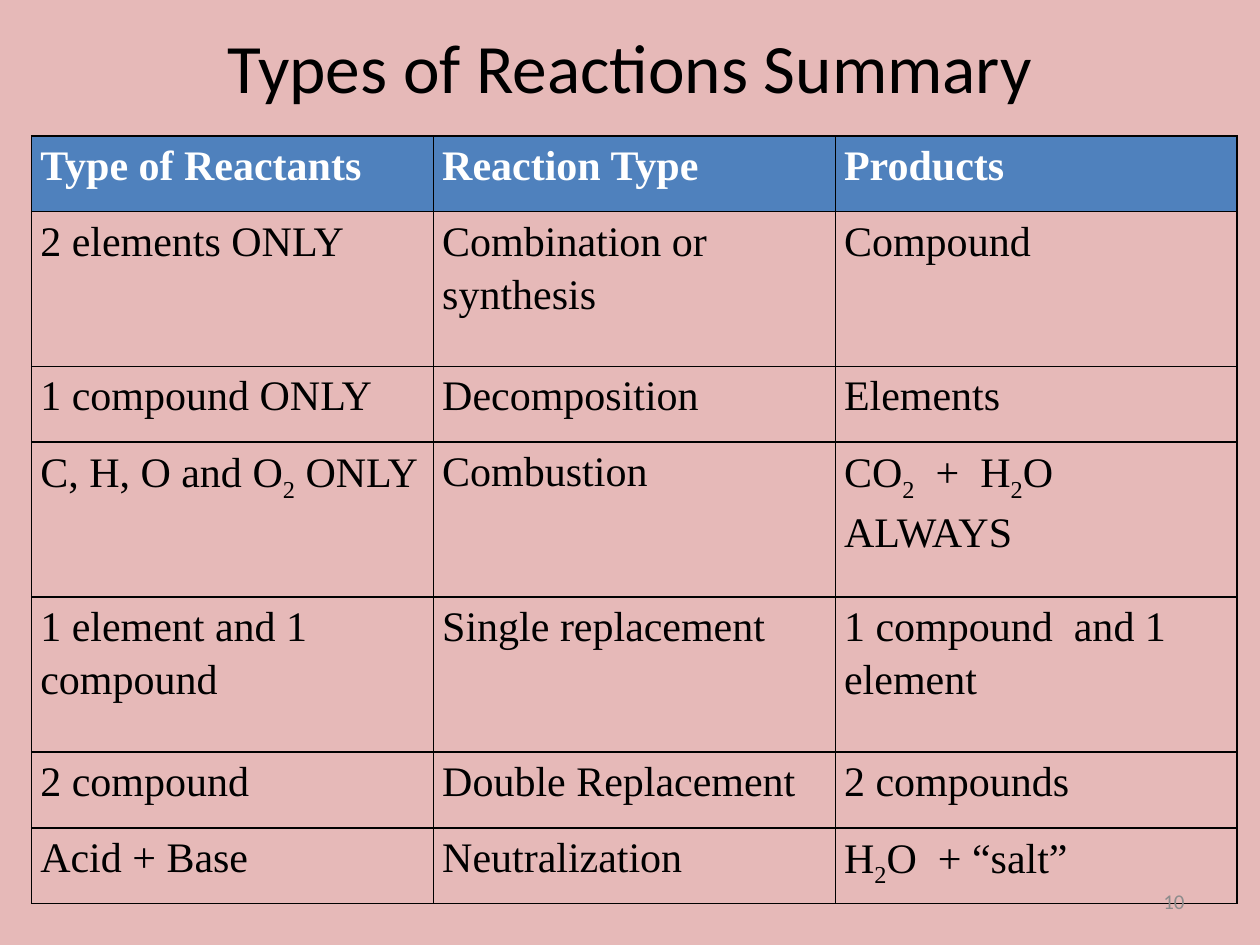
import pptx
import pptx.util
import pptx.dml.color
import pptx.enum.text
import pptx.oxml
from lxml import etree

Inches = pptx.util.Inches
Pt = pptx.util.Pt
ALIGN = pptx.enum.text.PP_ALIGN
MIDDLE = pptx.enum.text.MSO_ANCHOR.MIDDLE

COLORS = {"back": "E6B9B8", "head": "4F81BD", "text": "000000",
          "light": "FFFFFF", "line": "000000", "number": "8C8C8C"}

# Text between tildes is subscript; a newline is a line break
ROWS = [
    ("Type of Reactants", "Reaction Type", "Products"),
    ("2 elements ONLY", "Combination or synthesis", "Compound"),
    ("1 compound ONLY", "Decomposition", "Elements"),
    ("C, H, O and O~2~ ONLY", "Combustion", "CO~2~  +  H~2~O\nALWAYS"),
    ("1 element and 1 compound", "Single replacement",
     "1 compound  and 1 element"),
    ("2 compound", "Double Replacement", "2 compounds"),
    ("Acid + Base", "Neutralization", "H~2~O  + “salt”"),
]
SHORT, TALL = 0.6, 1.23
HEIGHTS = [SHORT, TALL, SHORT, TALL, TALL, SHORT, SHORT]
WIDTH = 3.19


def rgb(name):
    return pptx.dml.color.RGBColor.from_string(COLORS[name])


def add_run(para, text, size, font, color, bold=False):
    run = para.add_run()
    run.text = text
    run.font.size = Pt(size)
    run.font.name = font
    run.font.bold = bold
    run.font.color.rgb = rgb(color)
    return run


def add_title(slide, text):
    title = slide.shapes.title
    title.left, title.top = Inches(0.5), Inches(0.17)
    title.width, title.height = Inches(9), Inches(0.7)
    frame = title.text_frame
    frame.vertical_anchor = MIDDLE
    frame.auto_size = pptx.enum.text.MSO_AUTO_SIZE.NONE
    para = frame.paragraphs[0]
    para.alignment = ALIGN.CENTER
    add_run(para, text, 39.6, "Calibri", "text")


def add_borders(cell):
    props = cell._tc.get_or_add_tcPr()
    for place, side in enumerate(("lnL", "lnR", "lnT", "lnB")):
        line = pptx.oxml.parse_xml(
            '<a:%s xmlns:a="http://schemas.openxmlformats.org/drawingml/2006/main"'
            ' w="12700"><a:solidFill><a:srgbClr val="%s"/></a:solidFill></a:%s>'
            % (side, COLORS["line"], side))
        props.insert(place, line)


def fill_cell(cell, text, head):
    cell.margin_left = cell.margin_right = Inches(0.07)
    cell.margin_top = cell.margin_bottom = 0
    if head:
        cell.fill.solid()
        cell.fill.fore_color.rgb = rgb("head")
    else:
        cell.fill.background()
    add_borders(cell)

    para = cell.text_frame.paragraphs[0]
    para.line_spacing = 1.15
    color = "light" if head else "text"
    for i, part in enumerate(text.split("~")):
        for j, piece in enumerate(part.split("\n")):
            if j:
                para.add_line_break()
            run = add_run(para, piece, 24, "Times New Roman", color, head)
            if i % 2:
                run.font._element.set("baseline", "-25000")


def add_grid(slide):
    count = len(ROWS[0])
    table = slide.shapes.add_table(
        len(ROWS), count, Inches(0.25), Inches(1.08),
        Inches(WIDTH * count), Inches(sum(HEIGHTS))).table
    table.horz_banding = False
    for col in table.columns:
        col.width = Inches(WIDTH)
    for r, (texts, height) in enumerate(zip(ROWS, HEIGHTS)):
        table.rows[r].height = Inches(height)
        for c, text in enumerate(texts):
            fill_cell(table.cell(r, c), text, r == 0)


def add_number(slide, text):
    box = slide.shapes.add_textbox(
        Inches(7.17), Inches(6.95), Inches(2.33), Inches(0.4))
    frame = box.text_frame
    frame.word_wrap = True
    frame.vertical_anchor = MIDDLE
    para = frame.paragraphs[0]
    para.alignment = ALIGN.RIGHT
    add_run(para, text, 12, "Calibri", "number")


def main():
    deck = pptx.Presentation()
    deck.slide_width, deck.slide_height = Inches(10), Inches(7.5)
    slide = deck.slides.add_slide(deck.slide_layouts[5])

    # Background
    slide.background.fill.solid()
    slide.background.fill.fore_color.rgb = rgb("back")

    # Title, table and page number
    add_title(slide, "Types of Reactions Summary")
    add_grid(slide)
    add_number(slide, "10")
    deck.save("out.pptx")


if __name__ == "__main__":
    main()
